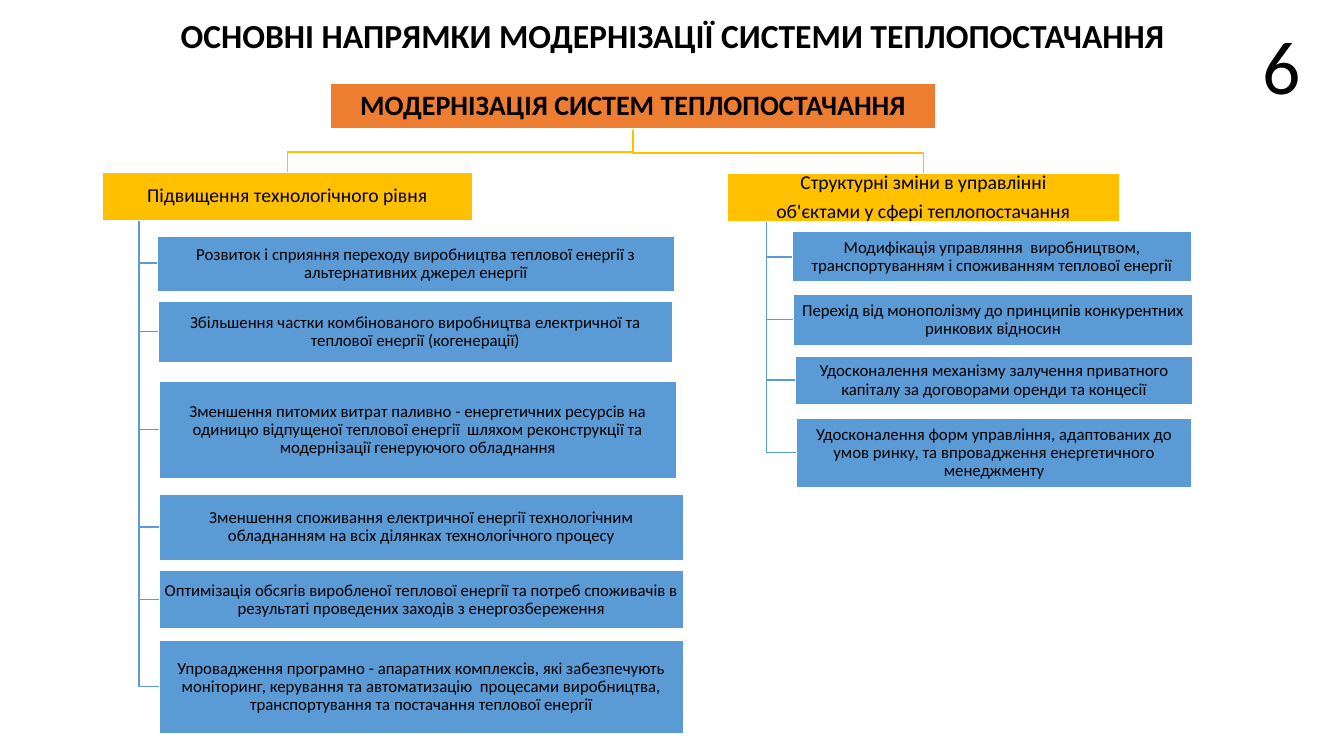
from dataclasses import dataclass

from pptx import Presentation
from pptx.dml.color import RGBColor
from pptx.enum.shapes import MSO_SHAPE
from pptx.enum.text import MSO_ANCHOR, MSO_AUTO_SIZE, PP_ALIGN
from pptx.util import Pt

PX = 9144


@dataclass(frozen=True)
class Theme:
    font: str = "Calibri"
    ink: str = "000000"
    paper: str = "FFFFFF"
    root: str = "ED7D31"
    branch: str = "FFC000"
    measure: str = "5B9BD5"
    number_size: int = 54
    title_size: int = 24
    root_size: int = 20
    branch_size: int = 14
    measure_size: int = 12


theme = Theme()


def write(frame, lines, size, bold=False, spacing=0.9, after=0):
    for index, line in enumerate(lines):
        paragraph = frame.add_paragraph() if index else frame.paragraphs[0]
        paragraph.alignment = PP_ALIGN.CENTER
        paragraph.line_spacing = spacing
        paragraph.space_before = Pt(0)
        paragraph.space_after = Pt(after)
        run = paragraph.add_run()
        run.text = line
        run.font.name = theme.font
        run.font.size = Pt(size)
        run.font.bold = bold
        run.font.color.rgb = RGBColor.from_string(theme.ink)


branches = [
    ((101, 171, 368, 48), ["Підвищення технологічного рівня"], [
        (156, 234, 513, 55, "Розвиток і сприяння переходу виробництва теплової енергії з альтернативних джерел енергії"),
        (157, 299, 510, 61, "Збільшення частки комбінованого виробництва електричної та теплової енергії (когенерації)"),
        (158, 378, 513, 97, "Зменшення питомих витрат паливно - енергетичних ресурсів на одиницю відпущеної теплової енергії  шляхом реконструкції та модернізації генеруючого обладнання"),
        (158, 490, 520, 66, "Зменшення споживання електричної енергії технологічним обладнанням на всіх ділянках технологічного процесу"),
        (158, 566, 520, 58, "Оптимізація обсягів виробленої теплової енергії та потреб споживачів в результаті проведених заходів з енергозбереження"),
        (158, 635, 520, 93, "Упровадження програмно - апаратних комплексів, які забезпечують моніторинг, керування та автоматизацію  процесами виробництва, транспортування та постачання теплової енергії"),
    ]),
    ((721, 172, 390, 48), ["Структурні зміни в управлінні", "об'єктами у сфері теплопостачання"], [
        (786, 230, 396, 50, "Модифікація управляння  виробництвом, транспортуванням і споживанням теплової енергії"),
        (787, 292, 396, 51, "Перехід від монополізму до принципів конкурентних ринкових відносин"),
        (789, 353, 394, 49, "Удосконалення механізму залучення приватного капіталу за договорами оренди та концесії"),
        (790, 415, 392, 69, "Удосконалення форм управління, адаптованих до умов ринку, та впровадження енергетичного менеджменту"),
    ]),
]

root_box = (328, 83, 600, 45)
root_x, root_bottom = 628, 128
boxes = [(root_box, ["МОДЕРНІЗАЦІЯ СИСТЕМ ТЕПЛОПОСТАЧАННЯ"], theme.root, theme.root_size)]
links = []
for branch_box, heading, measures in branches:
    left, top, width, height = branch_box
    middle, turn = left + width // 2, top - 20
    links.append((theme.branch, [(root_x, root_bottom), (root_x, turn), (middle, turn), (middle, top)]))
    boxes.append((branch_box, heading, theme.branch, theme.branch_size))
    spine = left + round(width / 10)
    for x, y, w, h, wording in measures:
        centre = y + h // 2
        links.append((theme.measure, [(spine, top + height), (spine, centre), (x, centre)]))
        boxes.append(((x, y, w, h), [wording], theme.measure, theme.measure_size))

prs = Presentation()
prs.slide_width, prs.slide_height = 1333 * PX, 750 * PX
slide = prs.slides.add_slide(prs.slide_layouts[5])

title = slide.shapes.title
title.left, title.top, title.width, title.height = [n * PX for n in (167, 14, 1000, 71)]
title.text_frame.word_wrap = True
title.text_frame.auto_size = MSO_AUTO_SIZE.NONE
title.text_frame.vertical_anchor = MSO_ANCHOR.TOP
write(title.text_frame, ["ОСНОВНІ НАПРЯМКИ МОДЕРНІЗАЦІЇ СИСТЕМИ ТЕПЛОПОСТАЧАННЯ"], theme.title_size, bold=True)

page_number = slide.shapes.add_textbox(*[n * PX for n in (1242, 14, 59, 101)])
page_number.text_frame.word_wrap = False
page_number.text_frame.auto_size = MSO_AUTO_SIZE.SHAPE_TO_FIT_TEXT
write(page_number.text_frame, ["6"], theme.number_size, spacing=1.0)

for color, points in links:
    builder = slide.shapes.build_freeform(*points[0], scale=PX)
    builder.add_line_segments(points[1:], close=False)
    link = builder.convert_to_shape()
    link.shadow.inherit = False
    link.fill.background()
    link.line.color.rgb = RGBColor.from_string(color)
    link.line.width = Pt(1)

for bounds, lines, color, size in boxes:
    box = slide.shapes.add_shape(MSO_SHAPE.RECTANGLE, *[n * PX for n in bounds])
    box.shadow.inherit = False
    box.fill.solid()
    box.fill.fore_color.rgb = RGBColor.from_string(color)
    box.line.color.rgb = RGBColor.from_string(theme.paper)
    box.line.width = Pt(1)
    frame = box.text_frame
    frame.word_wrap = True
    frame.vertical_anchor = MSO_ANCHOR.MIDDLE
    frame.margin_left = frame.margin_right = frame.margin_top = frame.margin_bottom = PX
    write(frame, lines, size, bold=size == theme.root_size, after=round(size * 0.35))

prs.save("out.pptx")
